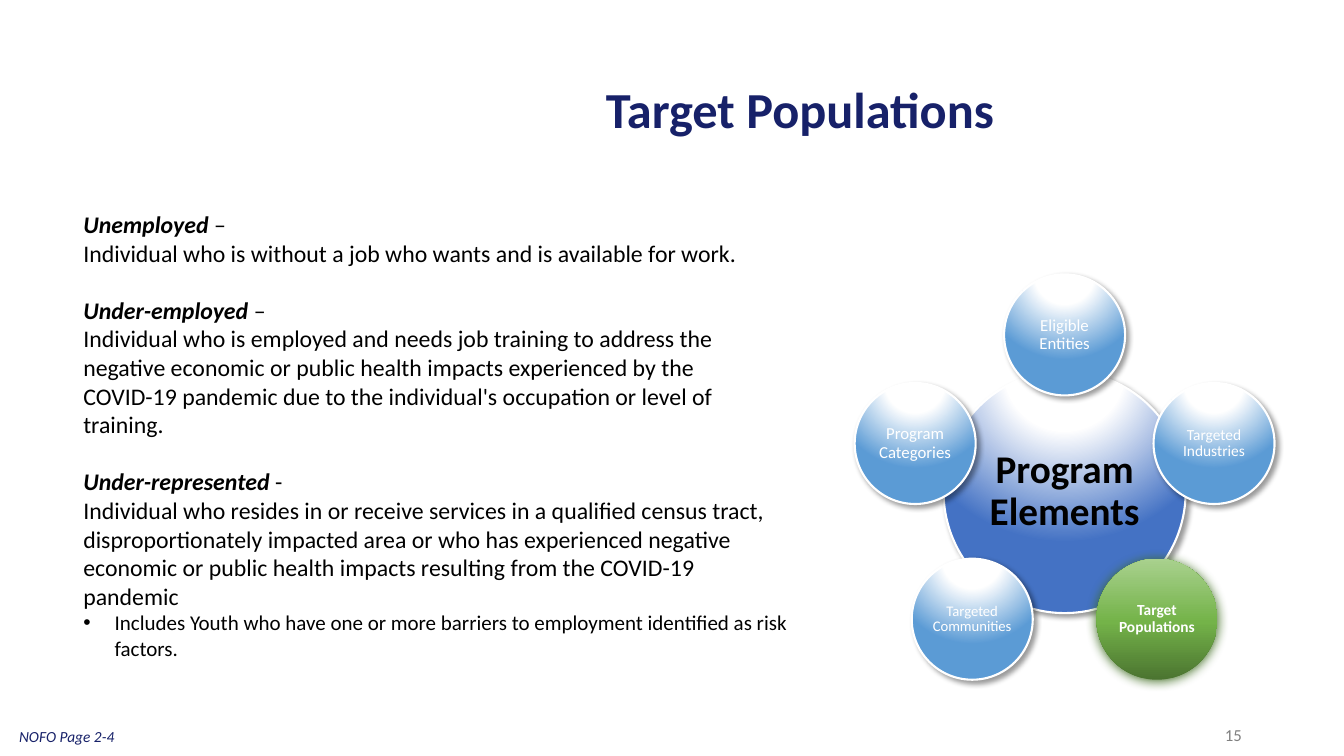
"""Build the Target Populations slide with its ring of program elements."""
from dataclasses import dataclass
from math import cos, radians, sin

from pptx import Presentation
from pptx.dml.color import RGBColor
from pptx.enum.shapes import MSO_SHAPE
from pptx.enum.text import MSO_ANCHOR as Anchor, PP_ALIGN as Align
from pptx.oxml import parse_xml
from pptx.oxml.ns import nsdecls, qn
from pptx.util import Cm, Pt


@dataclass(frozen=True)
class Theme:
    """Colours and type sizes of the slide."""

    font: str = "Calibri"
    navy: str = "172169"
    black: str = "000000"
    white: str = "FFFFFF"
    grey: str = "808080"
    blue: str = "4472C4"
    light_blue: str = "5B9BD5"
    greens: tuple = ((0, "4B7430"), (48, "74B349"), (100, "A9D18E"))
    glow: str = "3B6A1C"
    title: float = 36
    hub: float = 28
    body: float = 17
    bullet: float = 15
    page_number: float = 12
    note: float = 11


def add_text(paragraph, text, *, size, color, font, bold=False, italic=False):
    """Add a formatted run of text to a paragraph."""
    run = paragraph.add_run()
    run.text = text
    run.font.name = font
    run.font.size = Pt(size)
    run.font.bold = bold
    run.font.italic = italic
    run.font.color.rgb = RGBColor.from_string(color)


def gradient_xml(stops, direction):
    """Return a gradient fill element."""
    stop_xml = "".join(
        f'<a:gs pos="{position * 1000}"><a:srgbClr val="{color}"/></a:gs>'
        for position, color in stops
    )
    return parse_xml(
        f'<a:gradFill {nsdecls("a")} rotWithShape="1">'
        f"<a:gsLst>{stop_xml}</a:gsLst>{direction}</a:gradFill>"
    )


def shadow_xml(color, alpha, blur, distance, angle):
    """Return an outer shadow element."""
    return parse_xml(
        f'<a:outerShdw {nsdecls("a")} blurRad="{Pt(blur)}" dist="{Pt(distance)}" '
        f'dir="{angle * 60000}" algn="ctr" rotWithShape="0"><a:srgbClr val="{color}">'
        f'<a:alpha val="{alpha * 1000}"/></a:srgbClr></a:outerShdw>'
    )


class SlideBuilder:
    """Draw themed elements on the current slide."""

    def __init__(self, slide, theme):
        """Keep the slide and the theme."""
        self.slide = slide
        self.theme = theme

    def put_text(self, paragraph, text, **style):
        """Add text in the theme font, black body size by default."""
        defaults = {"font": self.theme.font, "size": self.theme.body, "color": self.theme.black}
        add_text(paragraph, text, **{**defaults, **style})

    def frame(self, left, top, width, height, anchor=Anchor.TOP):
        """Add a wrapping text box and return its text frame."""
        box = self.slide.shapes.add_textbox(Cm(left), Cm(top), Cm(width), Cm(height))
        box.text_frame.word_wrap = True
        box.text_frame.vertical_anchor = anchor
        return box.text_frame

    def label(self, text, area, align=Align.LEFT, anchor=Anchor.MIDDLE, spacing=1.0, **style):
        """Add a single line of text."""
        paragraph = self.frame(*area, anchor).paragraphs[0]
        paragraph.alignment = align
        paragraph.line_spacing = spacing
        self.put_text(paragraph, text, **style)

    def definitions(self, area, entries, bullet):
        """Add terms with their definitions and a closing bullet."""
        frame = self.frame(*area)
        for index, (term, dash, meaning) in enumerate(entries):
            heading = frame.add_paragraph() if index else frame.paragraphs[0]
            if index:
                heading.space_before = Pt(20.5)
            self.put_text(heading, term, bold=True, italic=True)
            self.put_text(heading, f" {dash}")
            self.put_text(frame.add_paragraph(), meaning)
        paragraph = frame.add_paragraph()
        properties = paragraph._p.get_or_add_pPr()
        properties.set("marL", str(Cm(0.79)))
        properties.set("indent", str(-Cm(0.79)))
        properties.append(parse_xml(f'<a:buFont {nsdecls("a")} typeface="Arial"/>'))
        properties.append(parse_xml(f'<a:buChar {nsdecls("a")} char="•"/>'))
        self.put_text(paragraph, bullet, size=self.theme.bullet)

    def circle(self, text, center, diameter, inset, fill, highlight=False, **style):
        """Add a shaded circle with a centred label."""
        theme = self.theme
        left, top = (value - diameter / 2 for value in center)
        shape = self.slide.shapes.add_shape(
            MSO_SHAPE.OVAL, Cm(left), Cm(top), Cm(diameter), Cm(diameter)
        )
        shape.fill.background()
        shape.shadow.inherit = False
        if highlight:
            shape.line.fill.background()
            gradient = gradient_xml(theme.greens, '<a:lin ang="16200000" scaled="0"/>')
            shadow = shadow_xml(theme.glow, 100, 8.5, 1, 90)
        else:
            shape.line.color.rgb = RGBColor.from_string(theme.white)
            shape.line.width = Pt(1.5)
            stops = ((0, theme.white), (35, theme.white), (100, fill))
            gradient = gradient_xml(
                stops,
                '<a:path path="circle"><a:fillToRect l="50000" t="-80000" '
                'r="50000" b="180000"/></a:path>',
            )
            shadow = shadow_xml(theme.black, 40, 4, 3, 45)
        properties = shape._element.spPr
        properties.replace(properties.find(qn("a:noFill")), gradient)
        properties.find(qn("a:effectLst")).append(shadow)
        frame = shape.text_frame
        frame.word_wrap = True
        frame.vertical_anchor = Anchor.MIDDLE
        frame.margin_left = frame.margin_right = Cm(inset)
        frame.margin_top = frame.margin_bottom = Cm(inset)
        paragraph = frame.paragraphs[0]
        paragraph.alignment = Align.CENTER
        paragraph.line_spacing = 0.9
        self.put_text(paragraph, text, **style)

    def ring(self, center, radius, elements, current):
        """Place the elements clockwise from the top around a center."""
        for index, (text, size) in enumerate(elements):
            angle = radians(360 / len(elements) * index - 90)
            spot = (center[0] + radius * cos(angle), center[1] + radius * sin(angle))
            chosen = text == current
            self.circle(text, spot, 3.05, 0.05, self.theme.light_blue, highlight=chosen,
                        size=size, color=self.theme.white, bold=chosen)


DEFINITIONS = (
    ("Unemployed", "–",
     "Individual who is without a job who wants and is available for work."),
    ("Under-employed", "–",
     "Individual who is employed and needs job training to address the negative economic "
     "or public health impacts experienced by the COVID-19 pandemic due to the "
     "individual's occupation or level of training."),
    ("Under-represented", "-",
     "Individual who resides in or receive services in a qualified census tract, "
     "disproportionately impacted area or who has experienced negative economic or "
     "public health impacts resulting from the COVID-19 pandemic"),
)
YOUTH = ("Includes Youth who have one or more barriers to employment identified "
         "as risk factors.")
ELEMENTS = (
    ("Eligible Entities", 12),
    ("Targeted Industries", 11),
    ("Target Populations", 11),
    ("Targeted Communities", 10.5),
    ("Program Categories", 12),
)


def main():
    """Build and save the presentation."""
    theme = Theme()
    presentation = Presentation()
    presentation.slide_width, presentation.slide_height = Cm(33.87), Cm(19.05)
    slide = presentation.slides.add_slide(presentation.slide_layouts[6])
    builder = SlideBuilder(slide, theme)
    title = "Target Populations"
    builder.label(title, (9.58, 2.06, 21.16, 1.55), Align.CENTER, spacing=0.9,
                  size=theme.title, color=theme.navy, bold=True)
    builder.label("15", (23.93, 18.01, 7.62, 1.02), Align.RIGHT,
                  size=theme.page_number, color=theme.grey)
    center = (26.83, 12.4)
    builder.circle("Program Elements", center, 6.1, 0.1, theme.blue,
                   size=theme.hub, color=theme.black, bold=True)
    builder.ring(center, 3.96, ELEMENTS, current=title)
    builder.definitions((1.85, 5.16, 18.31, 11.71), DEFINITIONS, YOUTH)
    builder.label("NOFO Page 2-4", (0.23, 18.19, 5.92, 0.74), anchor=Anchor.TOP,
                  size=theme.note, color=theme.navy, italic=True)
    presentation.save("out.pptx")


if __name__ == "__main__":
    main()
